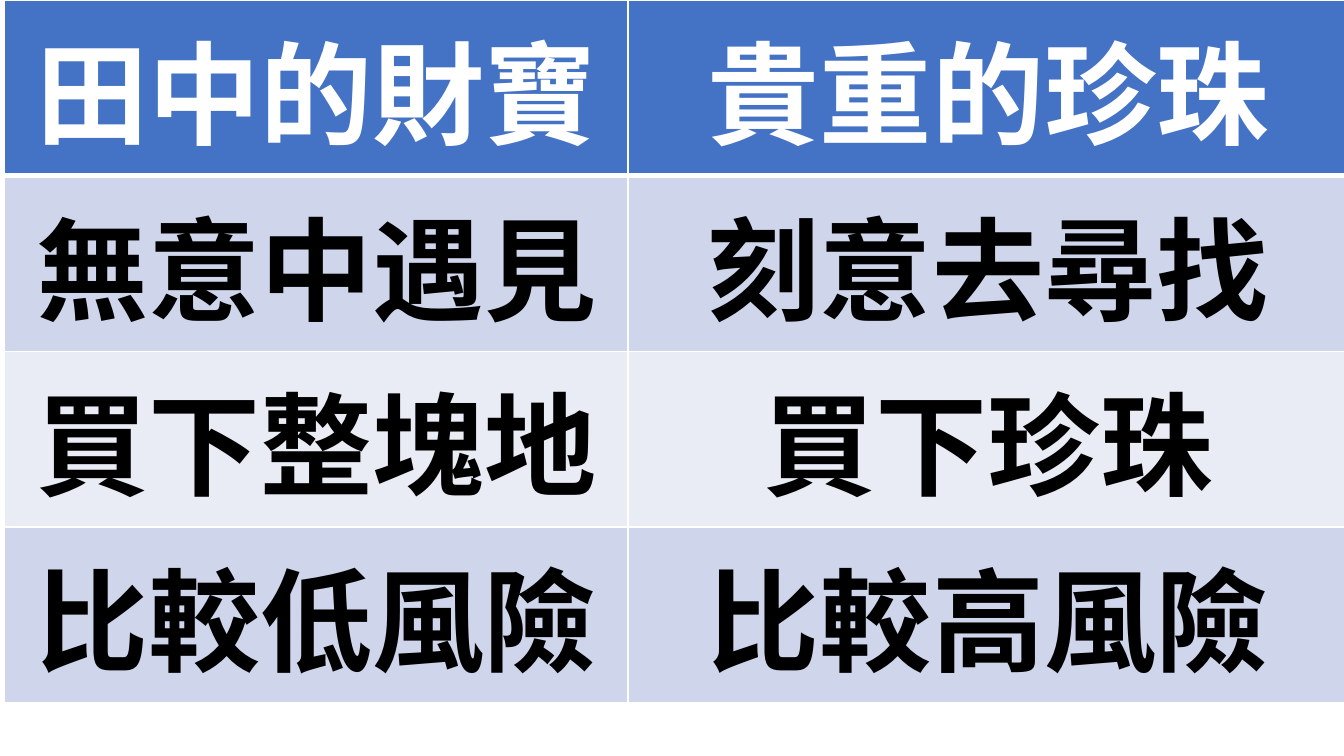
from lxml import etree
from pptx import Presentation
from pptx.dml.color import RGBColor
from pptx.enum.text import PP_ALIGN
from pptx.oxml.ns import qn
from pptx.util import Pt

CENTER = PP_ALIGN.CENTER
SCALE = 914400 / 134.4
FONT = "Noto Sans CJK TC"
COLORS = {
    "white": "FFFFFF",
    "black": "000000",
    "head": "4472C4",
    "odd": "CFD5EA",
    "even": "E9EBF5",
}
ROWS = [
    ("田中的財寶", "貴重的珍珠"),
    ("無意中遇見", "刻意去尋找"),
    ("買下整塊地", "買下珍珠"),
    ("比較低風險", "比較高風險"),
]
WIDTHS = [624, 720]
HEIGHTS = [155, 132, 132, 78]


def px(n):
    return round(n * SCALE)


def border(cell, side, width):
    props = cell._tc.get_or_add_tcPr()
    line = etree.SubElement(props, qn("a:ln" + side), w=str(Pt(width)))
    fill = etree.SubElement(line, qn("a:solidFill"))
    etree.SubElement(fill, qn("a:srgbClr"), val=COLORS["white"])


# Slide
deck = Presentation()
deck.slide_width, deck.slide_height = px(1344), px(756)
slide = deck.slides.add_slide(deck.slide_layouts[6])

# Table frame
frame = slide.shapes.add_table(len(ROWS), len(WIDTHS), px(4), 0, px(1344), px(598))
table = frame.table
for col, width in zip(table.columns, WIDTHS):
    col.width = px(width)
for row, height in zip(table.rows, HEIGHTS):
    row.height = px(height)
frame.height = px(598)

# Cells: header row, then banded rows
for r, texts in enumerate(ROWS):
    band = "head" if r == 0 else "odd" if r % 2 else "even"
    ink = "white" if r == 0 else "black"
    for c, text in enumerate(texts):
        cell = table.cell(r, c)
        for side in "LRTB":
            heavy = (r, side) in [(0, "B"), (1, "T")]
            border(cell, side, 3 if heavy else 1)
        cell.fill.solid()
        cell.fill.fore_color.rgb = RGBColor.from_string(COLORS[band])

        para = cell.text_frame.paragraphs[0]
        para.alignment = CENTER
        run = para.add_run()
        run.text = text
        font = run.font
        font.size, font.bold, font.name = Pt(60), True, FONT
        font.color.rgb = RGBColor.from_string(COLORS[ink])
        etree.SubElement(run._r.get_or_add_rPr(), qn("a:ea"), typeface=FONT)

deck.save("out.pptx")
